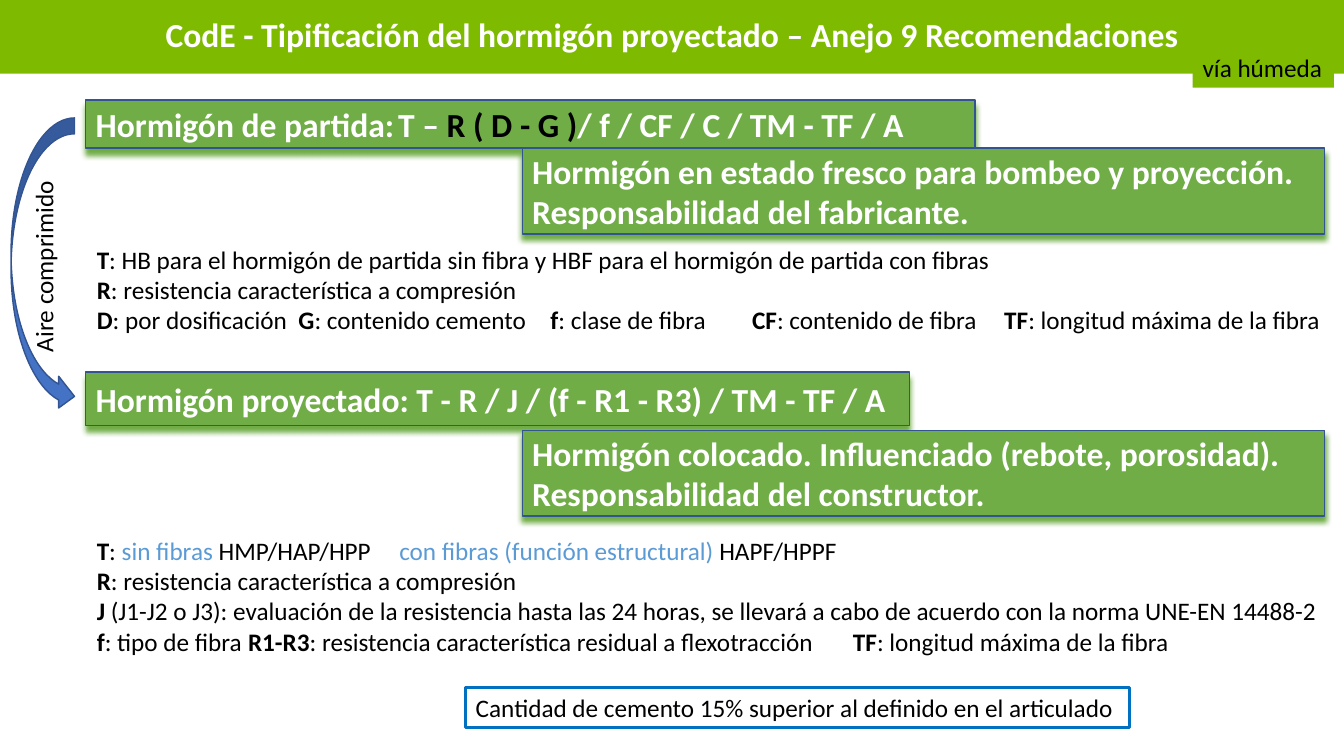
from dataclasses import dataclass
from typing import NamedTuple

from lxml.etree import SubElement
from pptx import Presentation
from pptx.dml.color import RGBColor as Rgb
from pptx.enum.shapes import MSO_SHAPE as Kind
from pptx.enum.text import MSO_ANCHOR as Anchor, MSO_AUTO_SIZE as Fit, PP_ALIGN as Align
from pptx.oxml.ns import qn
from pptx.util import Inches, Pt


@dataclass(frozen=True)
class Theme:
    font: str = "Calibri"
    big: int = 24
    small: int = 18
    white: str = "FFFFFF"
    black: str = "000000"
    lime: str = "7DBA00"
    green: str = "70AD47"
    navy: str = "325491"
    arrow: str = "4472C4"
    sky: str = "5B9BD5"
    frame: str = "0070C0"


class Box(NamedTuple):
    left: float
    top: float
    width: float
    height: float


class Span(NamedTuple):
    text: str
    bold: bool = False
    color: str = Theme.black


class Line(NamedTuple):
    spans: list[Span]
    tabs: tuple[float, ...] = ()


class Panel(NamedTuple):
    box: Box
    lines: list[Line]


THEME = Theme()


def place(shape, box: Box) -> None:
    shape.left, shape.top, shape.width, shape.height = map(Inches, box)


def write(frame, lines: list[Line], size: int, align=Align.LEFT, anchor=Anchor.TOP, wrap=True) -> None:
    """Fill a text frame with lines of formatted spans."""
    frame.word_wrap = wrap
    frame.auto_size = Fit.NONE
    frame.vertical_anchor = anchor
    for row, line in enumerate(lines):
        para = frame.add_paragraph() if row else frame.paragraphs[0]
        props = para._p.get_or_add_pPr()
        props.set("marL", "0")
        props.set("indent", "0")
        SubElement(props, qn("a:buNone"))
        if line.tabs:
            stops = SubElement(props, qn("a:tabLst"))
            for stop in line.tabs:
                SubElement(stops, qn("a:tab"), pos=str(Inches(stop)), algn="l")
        para.alignment = align
        para.space_before = Pt(0)
        for span in line.spans:
            run = para.add_run()
            run.text = span.text
            run.font.name = THEME.font
            run.font.size = Pt(size)
            run.font.bold = span.bold
            run.font.color.rgb = Rgb.from_string(span.color)


def draw(slide, box: Box, fill: str = "", edge: str = "", weight: float = 1, kind=Kind.RECTANGLE):
    """Add a flat preset shape."""
    shape = slide.shapes.add_shape(kind, *map(Inches, box))
    shape.shadow.inherit = False
    if fill:
        shape.fill.solid()
        shape.fill.fore_color.rgb = Rgb.from_string(fill)
    else:
        shape.fill.background()
    if edge:
        shape.line.color.rgb = Rgb.from_string(edge)
        shape.line.width = Pt(weight)
    else:
        shape.line.fill.background()
    return shape


def shade(shape, color: str) -> None:
    """Cast a soft coloured shadow straight down."""
    effects = shape._element.spPr.find(qn("a:effectLst"))
    outer = SubElement(effects, qn("a:outerShdw"), blurRad=str(Pt(4)), dist=str(Pt(4)),
                       dir="5400000", algn="t", rotWithShape="0")
    SubElement(outer, qn("a:srgbClr"), val=color)


def head(text: str) -> Span:
    return Span(text, True, THEME.white)


def key(text: str) -> Span:
    return Span(text, True)


def blue(text: str) -> Span:
    return Span(text, False, THEME.sky)


STRENGTH = Line([key("R"), Span(": resistencia característica a compresión")])

PANELS = [
    Panel(Box(0.85, 0.99, 8.82, 0.48), [Line([
        head("Hormigón de partida:\tT – "), key("R ( D - G )"),
        head("/ f / CF / C / TM - TF / A")], (3.19,))]),
    Panel(Box(0.85, 3.69, 8.17, 0.53), [
        Line([head("Hormigón proyectado: T - R / J / (f - R1 - R3) / TM - TF / A")])]),
    Panel(Box(5.18, 1.47, 7.96, 0.85), [
        Line([head("Hormigón en estado fresco para bombeo y proyección.")]),
        Line([head("Responsabilidad del fabricante.")])]),
    Panel(Box(5.18, 4.27, 7.96, 0.85), [
        Line([head("Hormigón colocado. Influenciado (rebote, porosidad).")]),
        Line([head("Responsabilidad del constructor.")])]),
]

LISTS = [
    Panel(Box(0.86, 2.37, 12.36, 1.01), [
        Line([key("T"), Span(": HB para el hormigón de partida sin fibra y HBF "
                             "para el hormigón de partida con fibras")]),
        STRENGTH,
        Line([key("D"), Span(": por dosificación\t"), key("G"), Span(": contenido cemento\t"),
              key("f"), Span(": clase de fibra\t"), key("CF"), Span(": contenido de fibra\t"),
              key("TF"), Span(": longitud máxima de la fibra")], (2.11, 4.54, 6.25, 8.64))]),
    Panel(Box(0.86, 5.26, 12.36, 1.31), [
        Line([key("T"), Span(": "), blue("sin fibras "), Span("HMP/HAP/HPP\t"),
              blue("con fibras (función estructural) "), Span("HAPF/HPPF")], (3.45,)),
        STRENGTH,
        Line([key("J"), Span(" (J1-J2 o J3): evaluación de la resistencia hasta las 24 horas, "
                             "se llevará a cabo de acuerdo con la norma UNE-EN 14488-2")]),
        Line([key("f"), Span(": tipo de fibra\t"), key("R1-R3"),
              Span(": resistencia característica residual a flexotracción\t"),
              key("TF"), Span(": longitud máxima de la fibra")], (1.72, 8.01))]),
]


def main() -> None:
    deck = Presentation()
    deck.slide_width, deck.slide_height = Inches(13.33), Inches(7.5)
    slide = deck.slides.add_slide(deck.slide_layouts[3])

    # Title band and its tag
    title = slide.shapes.title
    place(title, Box(0, 0, 13.33, 0.73))
    title.fill.solid()
    title.fill.fore_color.rgb = Rgb.from_string(THEME.lime)
    write(title.text_frame, [Line([head("CodE - Tipificación del hormigón proyectado – "
                                        "Anejo 9 Recomendaciones")])],
          THEME.big, Align.CENTER, Anchor.MIDDLE)
    title.text_frame.paragraphs[0].line_spacing = 0.9
    tag = draw(slide, Box(11.83, 0.47, 1.4, 0.4), THEME.lime)
    write(tag.text_frame, [Line([Span("vía húmeda")])], THEME.small, wrap=False)

    # Definition lists
    for index, panel in enumerate(LISTS, 1):
        body = slide.placeholders[index]
        place(body, panel.box)
        write(body.text_frame, panel.lines, THEME.small)

    # Green panels
    for panel in PANELS:
        shape = draw(slide, panel.box, THEME.green, THEME.navy)
        shade(shape, THEME.green)
        write(shape.text_frame, panel.lines, THEME.big, anchor=Anchor.MIDDLE)

    # Compressed air arrow and label
    draw(slide, Box(0.11, 1.17, 0.63, 2.92), THEME.arrow, THEME.navy, kind=Kind.CURVED_RIGHT_ARROW)
    label = slide.shapes.add_textbox(*map(Inches, Box(-0.53, 2.43, 1.92, 0.4)))
    label.rotation = 270
    write(label.text_frame, [Line([Span("Aire comprimido")])], THEME.small, wrap=False)

    # Cement note
    note = draw(slide, Box(4.62, 6.82, 6.58, 0.4), edge=THEME.frame, weight=2)
    write(note.text_frame, [Line([Span("Cantidad de cemento 15% superior al definido "
                                       "en el articulado")])], THEME.small)

    deck.save("out.pptx")


if __name__ == "__main__":
    main()
